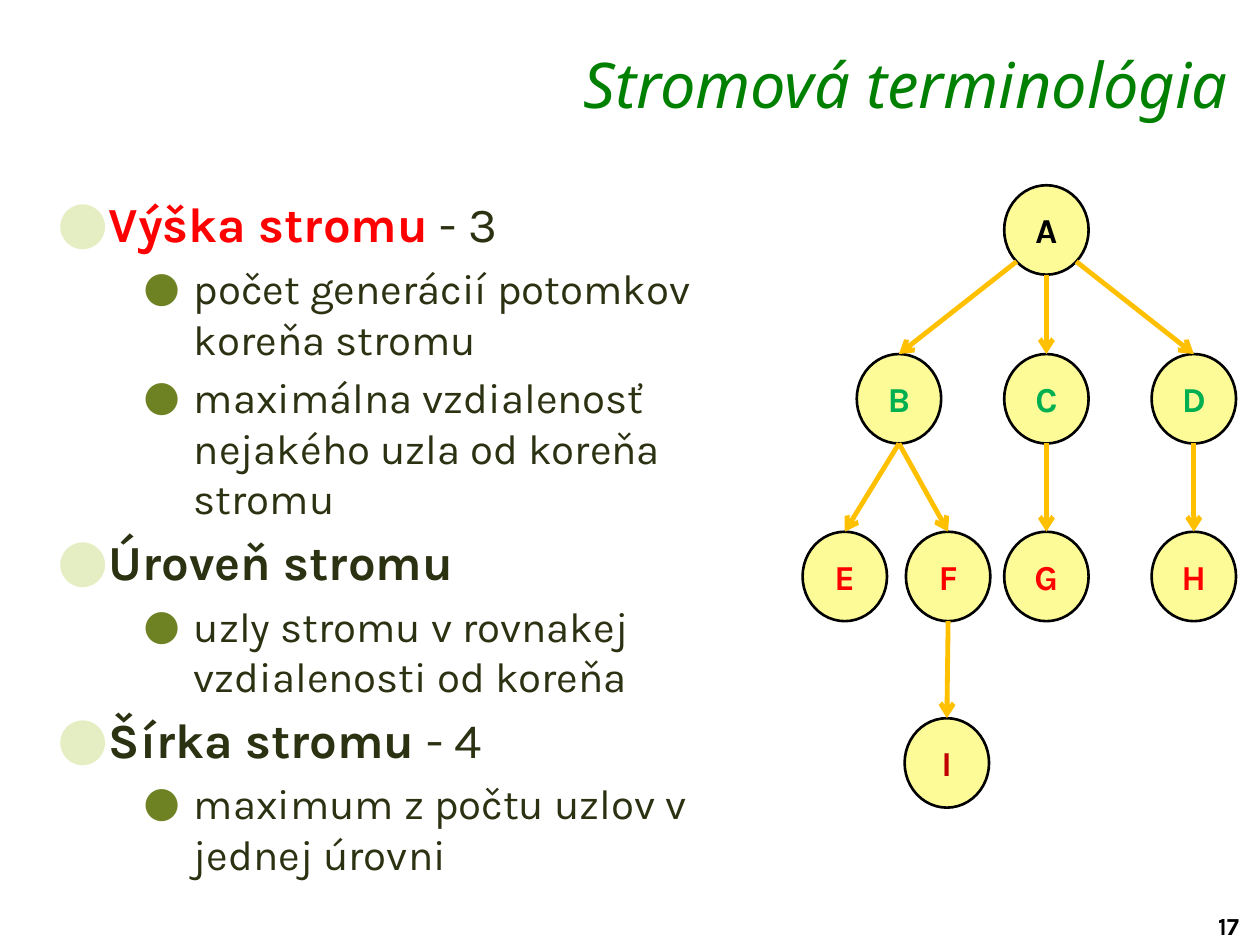
from math import sqrt

from lxml.etree import SubElement
from pptx import Presentation
from pptx.dml.color import RGBColor
from pptx.enum.shapes import MSO_CONNECTOR as Link, MSO_SHAPE as Shape
from pptx.enum.text import MSO_ANCHOR as Anchor, PP_ALIGN as Align
from pptx.oxml.ns import qn
from pptx.util import Inches, Pt

BLACK = RGBColor(0x00, 0x00, 0x00)
RED = RGBColor(0xFF, 0x00, 0x00)
DARK_RED = RGBColor(0xC0, 0x00, 0x00)
GREEN = RGBColor(0x00, 0xB0, 0x50)
TITLE_GREEN = RGBColor(0x00, 0x80, 0x00)
OLIVE = RGBColor(0x2B, 0x32, 0x12)
PALE_DOT = RGBColor(0xE5, 0xEE, 0xC2)
OLIVE_DOT = RGBColor(0x6E, 0x82, 0x24)
NODE_FILL = RGBColor(0xFD, 0xFB, 0x97)
AMBER = RGBColor(0xFF, 0xC0, 0x00)

COLUMNS, ROWS = 100, 75
NODE_WIDTH, NODE_HEIGHT = 6.7, 7.1
LEVEL_TOPS = (14.7, 28.1, 42.2, 57)
LEVEL_COLORS = (BLACK, GREEN, RED, DARK_RED)
NODES = {
    "A": (79.7, 0),
    "B": (68, 1), "C": (79.7, 1), "D": (91.4, 1),
    "E": (63.7, 2), "F": (71.9, 2), "G": (79.7, 2), "H": (91.4, 2),
    "I": (71.8, 3),
}
EDGES = (("E", "B", 0), ("G", "C", 0), ("H", "D", 0), ("I", "F", 0),
         ("B", "A", -1), ("C", "A", 0), ("D", "A", 1), ("F", "B", 0))
TERMS = (
    ("Výška stromu", " - 3", RED, (
        "počet generácií potomkov koreňa stromu",
        "maximálna vzdialenosť nejakého uzla od koreňa stromu")),
    ("Úroveň stromu", "", OLIVE, (
        "uzly stromu v rovnakej vzdialenosti od koreňa",)),
    ("Šírka stromu", " - 4", OLIVE, (
        "maximum z počtu uzlov v jednej úrovni",)),
)


class TreeSlide:
    """Draws text, tree nodes and arrows on a slide grid in one style."""

    def __init__(self, deck):
        self.body_font, self.title_font = "Karla", "Noto Sans"
        self.column = deck.slide_width / COLUMNS
        self.row = deck.slide_height / ROWS
        self.slide = deck.slides.add_slide(deck.slide_layouts[6])

    def place(self, left, top, *extent):
        scale = (self.column, self.row) * 2
        return [round(n * unit) for n, unit in zip((left, top, *extent), scale)]

    def style(self, target, size, color=None, bold=None, name=None):
        font = target.font
        font.size, font.bold, font.name = Pt(size), bold, name or self.body_font
        if color is not None:
            font.color.rgb = color
        return font

    def frame(self, *area, wrap=True):
        frame = self.slide.shapes.add_textbox(*self.place(*area)).text_frame
        frame.word_wrap = wrap
        return frame

    def title(self, text, *area):
        heading = self.frame(*area).paragraphs[0]
        heading.text, heading.alignment = text, Align.RIGHT
        self.style(heading, 36, TITLE_GREEN, name=self.title_font).italic = True

    def page_number(self, text, *area):
        number = self.frame(*area, wrap=False).paragraphs[0]
        number.text = text
        self.style(number, 14, BLACK, True)

    def bullet(self, paragraph, margin, hanging, color, percent):
        properties = paragraph._p.get_or_add_pPr()
        properties.set("marL", str(Inches(margin)))
        properties.set("indent", str(-Inches(hanging)))
        tint = SubElement(properties, qn("a:buClr"))
        SubElement(tint, qn("a:srgbClr"), val=str(color))
        SubElement(properties, qn("a:buSzPct"), val=str(percent * 1000))
        SubElement(properties, qn("a:buFont"), typeface=self.body_font)
        SubElement(properties, qn("a:buChar"), char="●")

    def definitions(self, terms, *area):
        frame = self.frame(*area)
        for index, (term, value, color, meanings) in enumerate(terms):
            heading = frame.add_paragraph() if index else frame.paragraphs[0]
            self.bullet(heading, 0.39, 0.39, PALE_DOT, 120)
            heading.space_after = Pt(5.6)
            self.style(heading, 28)
            for text, tone, bold in ((term, color, True), (value, OLIVE, False)):
                if text:
                    part = heading.add_run()
                    part.text, part.font.bold = text, bold
                    part.font.color.rgb = tone
            for meaning in meanings:
                detail = frame.add_paragraph()
                detail.text, detail.level = meaning, 1
                self.bullet(detail, 1.08, 0.4, OLIVE_DOT, 100)
                detail.space_after = Pt(4.8)
                self.style(detail, 24, OLIVE, False)

    def node(self, label, left, level):
        area = self.place(left, LEVEL_TOPS[level], NODE_WIDTH, NODE_HEIGHT)
        circle = self.slide.shapes.add_shape(Shape.FLOWCHART_CONNECTOR, *area)
        circle.shadow.inherit = False
        circle.fill.solid()
        circle.fill.fore_color.rgb = NODE_FILL
        circle.line.color.rgb, circle.line.width = BLACK, Pt(1.5)
        frame = circle.text_frame
        frame.margin_left = frame.margin_right = 0
        frame.vertical_anchor = Anchor.MIDDLE
        name = frame.paragraphs[0]
        name.text, name.alignment = label, Align.CENTER
        self.style(name, 20, LEVEL_COLORS[level], True)

    def edge(self, child, parent, side):
        (child_left, child_level), (left, level) = NODES[child], NODES[parent]
        reach = 1 / sqrt(2) if side else 1
        start = self.place(child_left + NODE_WIDTH / 2, LEVEL_TOPS[child_level])
        end = self.place(left + NODE_WIDTH / 2 * (1 + side * reach),
                         LEVEL_TOPS[level] + NODE_HEIGHT / 2 * (1 + reach))
        arrow = self.slide.shapes.add_connector(Link.STRAIGHT, *start, *end)
        arrow.line.color.rgb, arrow.line.width = AMBER, Pt(2.75)
        SubElement(arrow.line._get_or_add_ln(), qn("a:headEnd"), type="arrow")
        SubElement(arrow._element.spPr, qn("a:effectLst"))


def main():
    deck = Presentation()
    deck.slide_width, deck.slide_height = Inches(10), Inches(7.5)
    page = TreeSlide(deck)
    page.page_number("17", 95.7, 71.8, 4.3, 3.2)
    page.definitions(TERMS, 3.6, 14.9, 60.5, 52.5)
    page.title("Stromová terminológia", 22.9, 3.1, 75.5, 5.8)
    for label, (left, level) in NODES.items():
        page.node(label, left, level)
    for child, parent, side in EDGES:
        page.edge(child, parent, side)
    deck.save("out.pptx")


if __name__ == "__main__":
    main()
